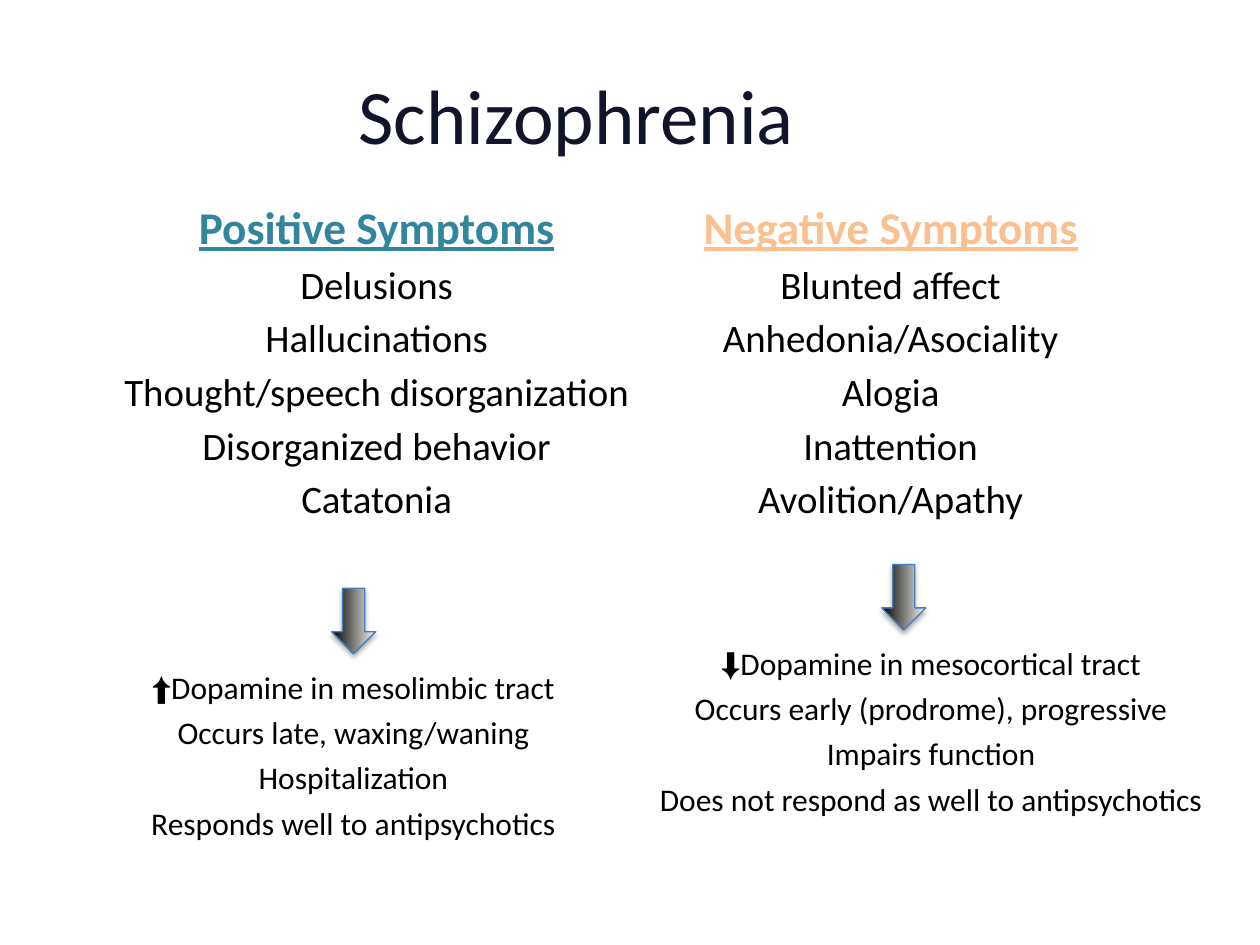
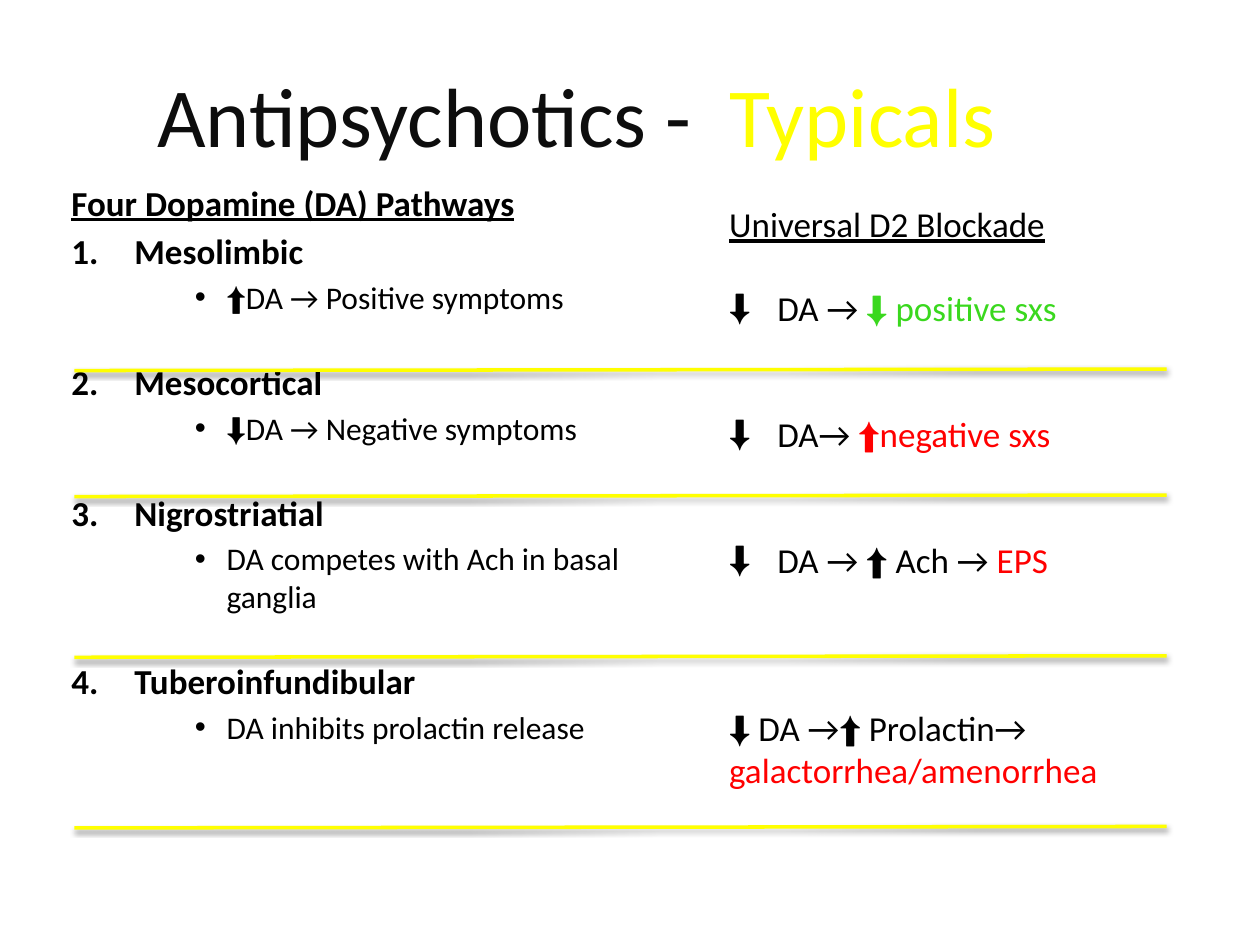
from dataclasses import dataclass

from lxml.etree import SubElement
from pptx import Presentation
from pptx.dml.color import RGBColor
from pptx.enum.shapes import MSO_CONNECTOR, MSO_SHAPE
from pptx.enum.text import MSO_ANCHOR, PP_ALIGN
from pptx.oxml.ns import qn
from pptx.util import Cm, Pt


@dataclass(frozen=True)
class Theme:
    font: str = "Calibri"
    arrow_font: str = "Arial"
    black: str = "000000"
    navy: str = "121429"
    near_black: str = "0D0D0D"
    teal: str = "31859C"
    peach: str = "FAC090"
    yellow: str = "FFFF00"
    green: str = "3AD81E"
    red: str = "FF0000"
    arrow_end: str = "F5F4ED"
    arrow_line: str = "4B7EBC"
    title_size: float = 44
    large_title_size: float = 48
    heading_size: float = 25.9
    symptom_size: float = 22.2
    pathway_size: float = 20
    detail_size: float = 18


THEME = Theme()
TITLE_BOX = (1.14, 1.02, 20.96, 2.54)


def add_span(para, text, size, color=THEME.black, **formats):
    span = para.add_run()
    span.text = text
    settings = {
        "name": THEME.arrow_font if text in ("⬆", "⬇") else THEME.font,
        "size": Pt(size),
        **formats,
    }
    for name, value in settings.items():
        setattr(span.font, name, value)
    span.font.color.rgb = RGBColor.from_string(color)


def add_para(frame, spans, size, formats=None, **font_formats):
    """Add a paragraph; spans are plain strings or (text, color) pairs."""
    first = frame.paragraphs[0]
    para = frame.add_paragraph() if first.runs else first
    for name, value in (formats or {}).items():
        setattr(para, name, value)
    for item in spans:
        text, color = (item, THEME.black) if isinstance(item, str) else item
        add_span(para, text, size, color, **font_formats)
    return para


def add_text_box(page, box, anchor=MSO_ANCHOR.TOP):
    frame = page.shapes.add_textbox(*map(Cm, box)).text_frame
    frame.word_wrap = True
    frame.vertical_anchor = anchor
    return frame


def add_title(page, spans, size):
    frame = add_text_box(page, TITLE_BOX, MSO_ANCHOR.MIDDLE)
    add_para(frame, spans, size, {"alignment": PP_ALIGN.CENTER})


def set_bullet(para, margin, hanging, tag=None, **attributes):
    """Indent a paragraph, lengths in cm, and give it a bullet if a tag is named."""
    properties = para._p.get_or_add_pPr()
    properties.set("marL", str(Cm(margin)))
    properties.set("indent", str(Cm(-hanging)))
    if tag:
        SubElement(properties, qn("a:buFont"), typeface=THEME.arrow_font)
        SubElement(properties, qn(tag), **attributes)


def set_shadow(shape, opacity, distance):
    """Cast a soft black shadow straight down; opacity in percent, distance in points."""
    effects = SubElement(shape._element.spPr, qn("a:effectLst"))
    shadow = SubElement(
        effects, qn("a:outerShdw"), blurRad=str(Pt(3.1)), dist=str(Pt(distance)),
        dir="5400000", rotWithShape="0",
    )
    color = SubElement(shadow, qn("a:srgbClr"), val=THEME.black)
    SubElement(color, qn("a:alpha"), val=str(opacity * 1000))


def add_symptoms(page, box, heading, color, symptoms):
    frame = add_text_box(page, box)
    formats = {"alignment": PP_ALIGN.CENTER, "space_before": Pt(4)}
    add_para(frame, [(heading, color)], THEME.heading_size, formats, bold=True, underline=True)
    for symptom in symptoms:
        add_para(frame, [symptom], THEME.symptom_size, formats)


def add_findings(page, box, arrow_center, lines):
    """Place the findings in the box and a block arrow that ends on its top edge."""
    frame = add_text_box(page, box)
    formats = {"alignment": PP_ALIGN.CENTER, "line_spacing": 1.2}
    for spans in lines:
        add_para(frame, spans, THEME.detail_size, formats)
    width, height = 0.89, 1.32
    arrow = page.shapes.add_shape(
        MSO_SHAPE.DOWN_ARROW, Cm(arrow_center - width / 2), Cm(box[1] - height),
        Cm(width), Cm(height),
    )
    arrow.fill.gradient()
    arrow.fill.gradient_angle = 0
    for stop, color in zip(arrow.fill.gradient_stops, (THEME.black, THEME.arrow_end)):
        stop.color.rgb = RGBColor.from_string(color)
    arrow.line.color.rgb = RGBColor.from_string(THEME.arrow_line)
    arrow.line.width = Pt(0.75)
    set_shadow(arrow, 35, 1.8)


def add_pathways(page, box, heading, pathways):
    frame = add_text_box(page, box)
    spacing = {"space_before": Pt(3.6)}
    para = add_para(frame, [heading], THEME.pathway_size, spacing, bold=True, underline=True)
    set_bullet(para, 0.05, 0)
    for index, (name, detail) in enumerate(pathways):
        gap = {"space_before": Pt(25.5)} if index else spacing
        para = add_para(frame, [name], THEME.pathway_size, gap, bold=True)
        set_bullet(para, 1.32, 1.27, "a:buAutoNum", type="arabicPeriod")
        para = add_para(frame, detail, THEME.detail_size, {"level": 1, **spacing})
        set_bullet(para, 3.18, 0.64, "a:buChar", char="•")


def add_effects(page, box, heading, effects):
    """Effects are (lines of space before, has arrow bullet, spans)."""
    frame = add_text_box(page, box)
    add_para(frame, [heading], THEME.pathway_size, underline=True)
    for blank_lines, bulleted, spans in effects:
        gap = {"space_before": Pt(24 * blank_lines)}
        para = add_para(frame, spans, THEME.pathway_size, gap)
        if bulleted:
            set_bullet(para, 0.97, 0.97, "a:buChar", char="⬇")


def add_dividers(page, left, right, heights):
    rise = 0.03
    for height in heights:
        divider = page.shapes.add_connector(
            MSO_CONNECTOR.STRAIGHT, Cm(left), Cm(height), Cm(right), Cm(height - rise)
        )
        divider.line.color.rgb = RGBColor.from_string(THEME.yellow)
        divider.line.width = Pt(2)
        set_shadow(divider, 38, 1.6)


def build_symptoms_page(page):
    add_title(page, [("Schizophrenia", THEME.navy)], THEME.title_size)
    columns = [
        ("Positive Symptoms", THEME.teal,
         ["Delusions", "Hallucinations", "Thought/speech disorganization",
          "Disorganized behavior", "Catatonia"]),
        ("Negative Symptoms", THEME.peach,
         ["Blunted affect", "Anhedonia/Asociality", "Alogia", "Inattention",
          "Avolition/Apathy"]),
    ]
    for index, column in enumerate(columns):
        add_symptoms(page, (2.16 + 10.36 * index, 3.89, 10.87, 7.1), *column)
    add_findings(page, (1.7, 13.18, 10.85, 3.91), 7.13, [
        ["⬆", "Dopamine in mesolimbic tract"],
        ["Occurs late, waxing/waning"],
        ["Hospitalization"],
        ["Responds well to antipsychotics"],
    ])
    add_findings(page, (12.98, 12.7, 11.58, 4.85), 18.22, [
        ["⬇", "Dopamine in mesocortical tract"],
        ["Occurs early (prodrome), progressive"],
        ["Impairs function"],
        ["Does not respond as well to antipsychotics"],
    ])


def build_typicals_page(page):
    title = [("Antipsychotics -  ", THEME.near_black), ("Typicals", THEME.yellow)]
    add_title(page, title, THEME.large_title_size)
    add_pathways(page, (1.14, 3.53, 13.28, 14.12), "Four Dopamine (DA) Pathways", [
        ("Mesolimbic", ["⬆", "DA → Positive symptoms"]),
        ("Mesocortical", ["⬇", "DA → Negative symptoms"]),
        ("Nigrostriatial", ["DA competes with Ach in basal ganglia"]),
        ("Tuberoinfundibular", ["DA inhibits prolactin release"]),
    ])
    add_effects(page, (14.45, 3.96, 10.26, 12.22), "Universal D2 Blockade", [
        (1, True, ["DA → ", ("⬇", THEME.green), (" positive sxs", THEME.green)]),
        (2, True, ["DA→ ", ("⬆", THEME.red), ("negative sxs", THEME.red)]),
        (2, True, ["DA → ", "⬆", " Ach → ", ("EPS", THEME.red)]),
        (3, False, ["⬇", " DA →", "⬆", " Prolactin→ ",
                    ("galactorrhea/amenorrhea", THEME.red)]),
    ])
    add_dividers(page, 1.5, 23.52, [7.47, 10.01, 13.25, 16.69])


def main():
    deck = Presentation()
    deck.slide_width, deck.slide_height = Cm(25.4), Cm(19.05)
    for build_page in (build_symptoms_page, build_typicals_page):
        build_page(deck.slides.add_slide(deck.slide_layouts[6]))
    deck.save("out.pptx")


if __name__ == "__main__":
    main()
